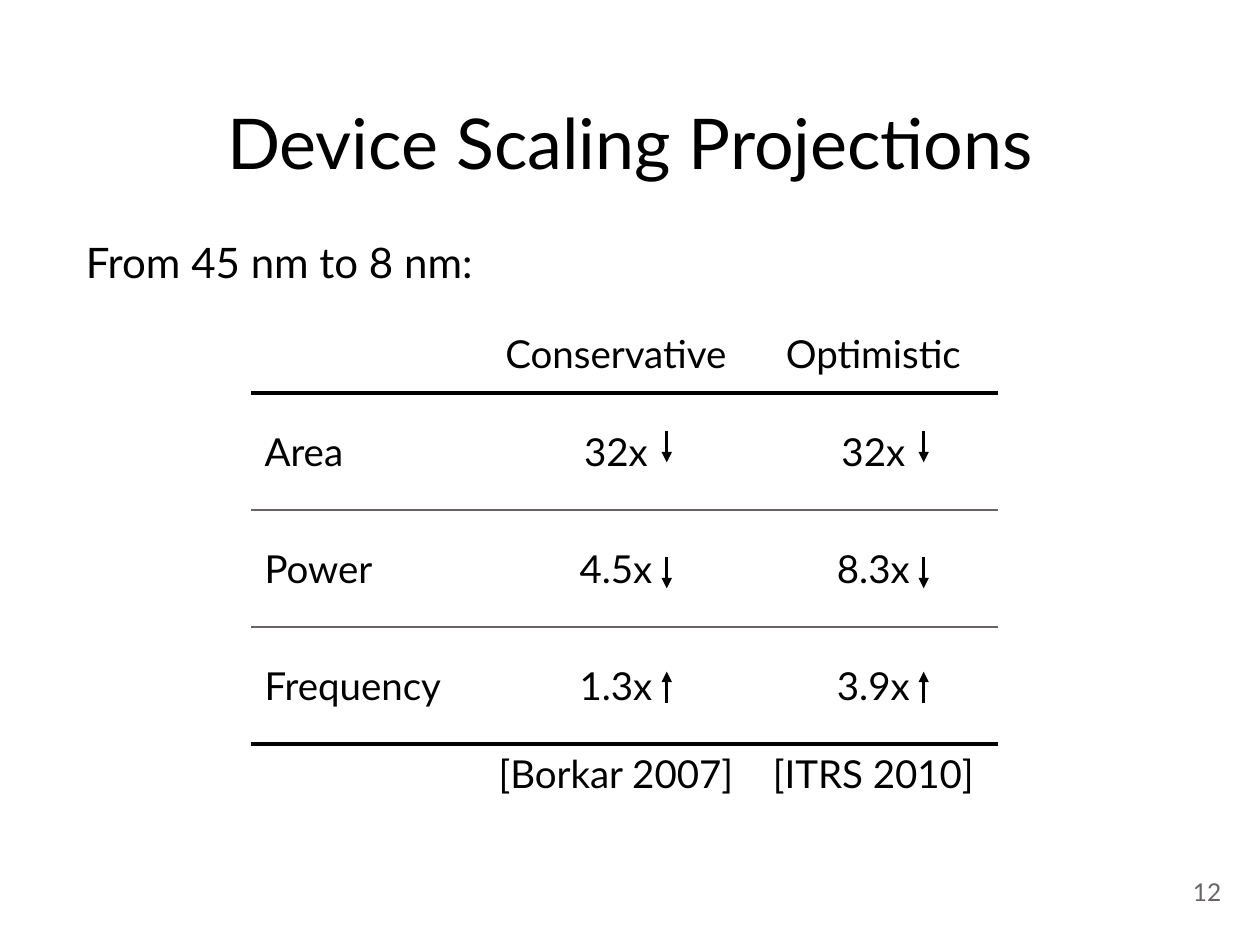
from pptx import Presentation
from pptx.dml.color import RGBColor
from pptx.enum.shapes import MSO_CONNECTOR as Link, MSO_SHAPE as Shape
from pptx.enum.text import MSO_ANCHOR as Anchor, PP_ALIGN as Align
from pptx.oxml.ns import qn
from pptx.util import Cm, Pt
from lxml.etree import SubElement

BLACK = RGBColor(0, 0, 0)
GRAY = RGBColor(0x69, 0x64, 0x64)
FONT = "Lato"

TITLE = "Device Scaling Projections"
INTRO = "From 45 nm to 8 nm:"
PAGE = "12"
ROWS = [
    ("", "Conservative", "Optimistic"),
    ("Area", "32x", "32x"),
    ("Power", "4.5x", "8.3x"),
    ("Frequency", "1.3x", "3.9x"),
    ("", "[Borkar 2007]", "[ITRS 2010]"),
]
WIDTHS = (4.65, 5.37, 5.01)
HEIGHTS = (1.57, 2.36, 2.36, 2.36, 2.01)
RULES = [(BLACK, 3), (GRAY, 1), (GRAY, 1), (BLACK, 3)]  # below each row

ARROW_X = (13.44, 18.62)
ARROW_LEN = 0.63
ARROWS = [(8.69, "down"), (11.23, "down"), (13.54, "up")]  # top, direction


def write(frame, text, size, color=BLACK, align=Align.LEFT):
    par = frame.paragraphs[0]
    par.text = text
    par.alignment = align
    par.font.name = FONT
    par.font.size = Pt(size)
    par.font.color.rgb = color


def rule(cell, side, color, width):
    """Draw one border of a cell; call before the cell gets its fill."""
    props = cell._tc.get_or_add_tcPr()
    line = SubElement(props, qn("a:" + side), w=str(Pt(width)))
    fill = SubElement(line, qn("a:solidFill"))
    SubElement(fill, qn("a:srgbClr"), val=str(color))


def add_grid(shapes):
    frame = shapes.add_table(len(ROWS), len(WIDTHS), Cm(5.08), Cm(6.35),
                             Cm(sum(WIDTHS)), Cm(sum(HEIGHTS)))
    table = frame.table
    table.first_row = table.horz_banding = False
    for col, width in zip(table.columns, WIDTHS):
        col.width = Cm(width)
    for r, (row, height) in enumerate(zip(ROWS, HEIGHTS)):
        table.rows[r].height = Cm(height)
        for c, text in enumerate(row):
            cell = table.cell(r, c)
            if r > 0:
                rule(cell, "lnT", *RULES[r - 1])
            if r < len(RULES):
                rule(cell, "lnB", *RULES[r])
            cell.fill.background()
            last = r == len(ROWS) - 1
            cell.vertical_anchor = Anchor.TOP if last else Anchor.MIDDLE
            write(cell.text_frame, text, 22,
                  align=Align.CENTER if c else Align.LEFT)


def add_arrow(shapes, x, start, end):
    arrow = shapes.add_connector(Link.STRAIGHT, Cm(x), Cm(start),
                                 Cm(x), Cm(end))
    arrow.line.color.rgb = BLACK
    arrow.line.width = Pt(2)
    SubElement(arrow.line._get_or_add_ln(), qn("a:tailEnd"), type="triangle")
    SubElement(arrow._element.spPr, qn("a:effectLst"))


def main():
    deck = Presentation()
    deck.slide_width, deck.slide_height = Cm(25.4), Cm(19.05)
    shapes = deck.slides.add_slide(deck.slide_layouts[5]).shapes

    title = shapes.title
    title.left, title.top = Cm(1.9), Cm(0.76)
    title.width, title.height = Cm(21.6), Cm(3.18)
    frame = title.text_frame
    frame.vertical_anchor = Anchor.BOTTOM
    frame.margin_bottom = Cm(0.25)
    write(frame, TITLE, 40, align=Align.CENTER)

    add_grid(shapes)

    page = shapes.add_shape(Shape.OVAL, Cm(23.7), Cm(17.35),
                            Cm(1.27), Cm(1.27))
    page.shadow.inherit = False
    page.fill.background()
    page.line.fill.background()
    frame = page.text_frame
    frame.margin_left = frame.margin_right = 0
    frame.margin_top = frame.margin_bottom = 0
    frame.word_wrap = False
    frame.vertical_anchor = Anchor.MIDDLE
    write(frame, PAGE, 14, GRAY, Align.CENTER)

    for top, way in ARROWS:
        ends = (top, top + ARROW_LEN)
        start, end = ends if way == "down" else ends[::-1]
        for x in ARROW_X:
            add_arrow(shapes, x, start, end)

    intro = shapes.add_textbox(Cm(1.48), Cm(4.65), Cm(9.53), Cm(1.27))
    intro.text_frame.word_wrap = True
    write(intro.text_frame, INTRO, 24)

    deck.save("out.pptx")


if __name__ == "__main__":
    main()
